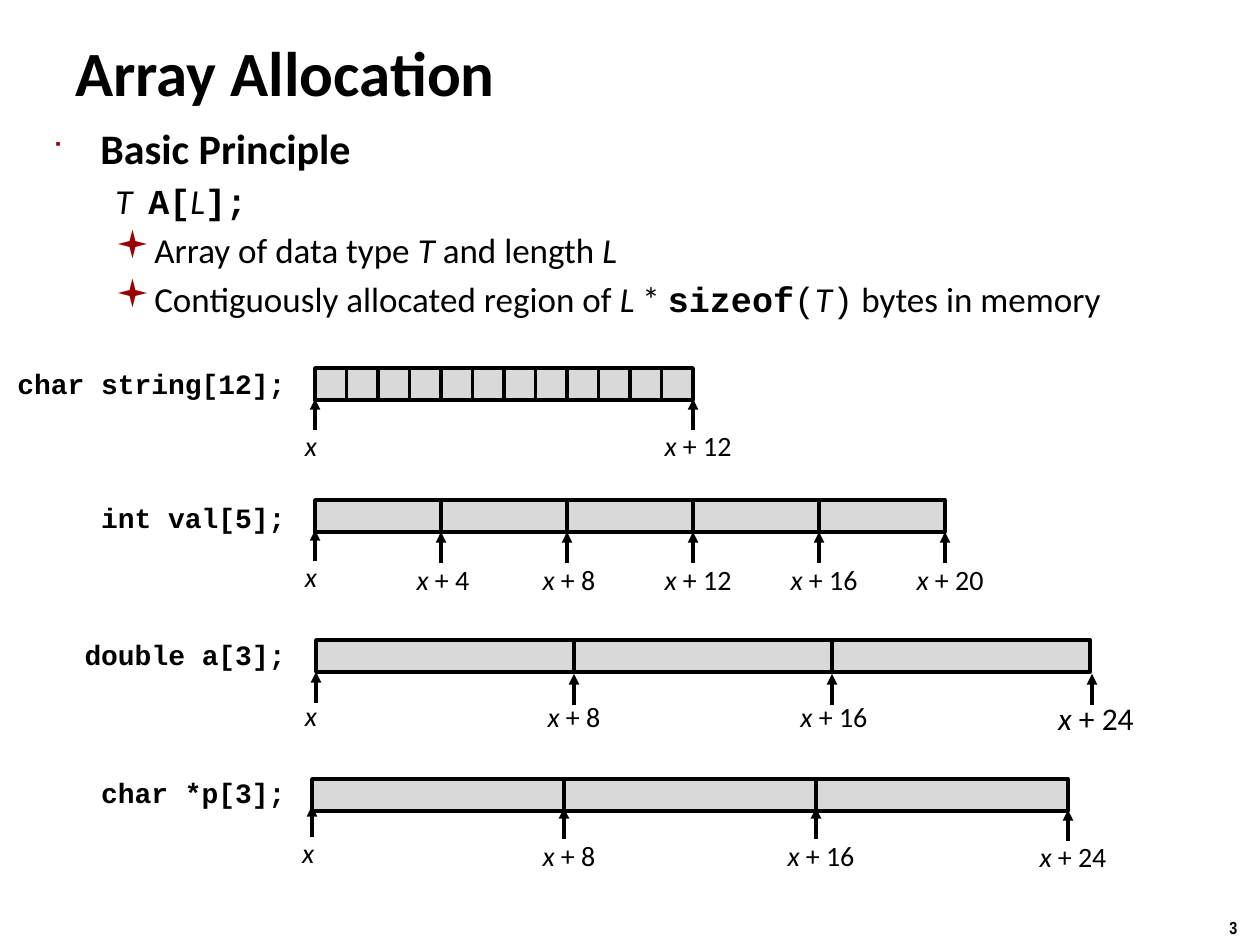
from dataclasses import dataclass

from lxml.etree import SubElement
from pptx import Presentation
from pptx.dml.color import RGBColor
from pptx.enum.shapes import MSO_CONNECTOR, MSO_SHAPE
from pptx.enum.text import MSO_ANCHOR, PP_ALIGN
from pptx.oxml.ns import qn
from pptx.util import Pt

EMU_PER_PX = 914400 / 126


@dataclass(frozen=True)
class Theme:
    ink: RGBColor = RGBColor(0, 0, 0)
    cell: RGBColor = RGBColor(0xD9, 0xD9, 0xD9)
    bullet: str = "990000"
    sans: str = "Calibri"
    mono: str = "Courier New"
    narrow: str = "Arial Narrow"
    title: int = 36
    heading: int = 24
    body: int = 20
    label: int = 16
    large_label: int = 18
    page: int = 10
    outline: int = 2


THEME = Theme()


@dataclass(frozen=True)
class Span:
    text: str
    italic: bool = False
    bold: bool = False
    font: str = THEME.sans
    tracking: int = 0


@dataclass(frozen=True)
class Bullet:
    char: str
    percent: int


@dataclass(frozen=True)
class Line:
    spans: tuple[Span, ...]
    size: int
    margin: int = 0
    hanging: int = 0
    before: float = 0
    bullet: Bullet | None = None
    align: PP_ALIGN = PP_ALIGN.LEFT


@dataclass(frozen=True)
class Mark:
    offset: int
    label_shift: int
    tip: int
    label_top: int
    nudge: int = 0
    size: int = THEME.label


@dataclass(frozen=True)
class ArrayRow:
    declaration: str
    declaration_top: int
    left: int
    top: int
    span: int
    count: int
    marks: tuple[Mark, ...]


CELL_HEIGHT = 32
ARROW_LENGTH = 31
SQUARE = Bullet("■", 60)
SMALL_SQUARE = Bullet("▪", 110)

PRINCIPLE = (
    Line((Span("Basic Principle", bold=True),), THEME.heading, 48, -48, 4.8, SQUARE),
    Line(
        (
            Span("T", italic=True),
            Span(" ", tracking=450),
            Span("A[", bold=True, font=THEME.mono),
            Span("L", italic=True),
            Span("];", bold=True, font=THEME.mono),
        ),
        THEME.body, 102, -39, 4,
    ),
    Line(
        (
            Span("Array of data type "),
            Span("T", italic=True),
            Span(" and length "),
            Span("L", italic=True),
        ),
        THEME.body, 102, -39, 4, SMALL_SQUARE,
    ),
    Line(
        (
            Span("Contiguously allocated region of "),
            Span("L", italic=True),
            Span(" * "),
            Span("sizeof", bold=True, font=THEME.mono),
            Span("(", font=THEME.mono),
            Span("T", italic=True),
            Span(")", font=THEME.mono),
            Span(" bytes in memory"),
        ),
        THEME.body, 102, -39, 4, SMALL_SQUARE,
    ),
)

ROWS = (
    ArrayRow("char string[12];", 360, 315, 368, 378, 12,
             (Mark(0, -4, 399, 422), Mark(12, 5, 399, 422))),
    ArrayRow("int val[5];", 494, 315, 500, 630, 5,
             (Mark(0, -4, 530, 553), Mark(4, 2, 532, 556), Mark(8, 2, 532, 556),
              Mark(12, 5, 532, 556), Mark(16, 5, 532, 556), Mark(20, 5, 532, 556))),
    ArrayRow("double a[3];", 631, 316, 640, 774, 3,
             (Mark(0, -5, 672, 692), Mark(8, 0, 674, 693), Mark(16, 2, 674, 693),
              Mark(24, 4, 674, 693, nudge=2, size=THEME.large_label))),
    ArrayRow("char *p[3];", 769, 312, 779, 756, 3,
             (Mark(0, -4, 806, 829), Mark(8, 5, 808, 832), Mark(16, 5, 808, 832),
              Mark(24, 5, 810, 833))),
)


def px(length: float) -> int:
    return round(length * EMU_PER_PX)


def add_bullet(properties, bullet: Bullet) -> None:
    color = SubElement(properties, qn("a:buClr"))
    SubElement(color, qn("a:srgbClr"), val=THEME.bullet)
    SubElement(properties, qn("a:buSzPct"), val=str(bullet.percent * 1000))
    SubElement(properties, qn("a:buFont"), typeface="Wingdings")
    SubElement(properties, qn("a:buChar"), char=bullet.char)


def fill_paragraph(paragraph, line: Line) -> None:
    paragraph.alignment = line.align
    paragraph.space_before = Pt(line.before)
    properties = paragraph._p.get_or_add_pPr()
    properties.set("marL", str(px(line.margin)))
    properties.set("indent", str(px(line.hanging)))
    if line.bullet:
        add_bullet(properties, line.bullet)
    paragraph.font.size = Pt(line.size)
    paragraph.font.color.rgb = THEME.ink
    shared = {(span.font, span.bold, span.italic) for span in line.spans}
    for span in line.spans:
        run = paragraph.add_run()
        run.text = span.text
        target = paragraph.font if len(shared) == 1 else run.font
        target.name, target.bold, target.italic = span.font, span.bold, span.italic
        if span.tracking:
            run._r.get_or_add_rPr().set("spc", str(span.tracking))


def add_text(slide, left: int, top: int, width: int, height: int,
             lines: tuple[Line, ...], anchor: MSO_ANCHOR = MSO_ANCHOR.TOP) -> None:
    frame = slide.shapes.add_textbox(px(left), px(top), px(width), px(height)).text_frame
    frame.word_wrap = True
    frame.vertical_anchor = anchor
    for index, line in enumerate(lines):
        fill_paragraph(frame.add_paragraph() if index else frame.paragraphs[0], line)


def add_cell(slide, left: float, top: int, width: float) -> None:
    cell = slide.shapes.add_shape(
        MSO_SHAPE.RECTANGLE, px(left), px(top), px(width), px(CELL_HEIGHT))
    cell.shadow.inherit = False
    cell.fill.solid()
    cell.fill.fore_color.rgb = THEME.cell
    cell.line.color.rgb = THEME.ink
    cell.line.width = Pt(THEME.outline)


def add_mark(slide, x: float, mark: Mark) -> None:
    arrow = slide.shapes.add_connector(
        MSO_CONNECTOR.STRAIGHT, px(x), px(mark.tip + ARROW_LENGTH), px(x), px(mark.tip))
    arrow.line.color.rgb = THEME.ink
    arrow.line.width = Pt(THEME.outline)
    properties = arrow._element.spPr
    SubElement(properties.find(qn("a:ln")), qn("a:tailEnd"), type="triangle")
    SubElement(properties, qn("a:effectLst"))
    if mark.offset:
        width, spans = 138, (Span("x ", italic=True), Span(f"+ {mark.offset}"))
    else:
        width, spans = 54, (Span("x", italic=True),)
    add_text(slide, x + mark.label_shift - width / 2, mark.label_top, width, 47,
             (Line(spans, mark.size, align=PP_ALIGN.CENTER),))


def add_array(slide, row: ArrayRow) -> None:
    declaration = Span(row.declaration, bold=True, font=THEME.mono)
    add_text(slide, 0, row.declaration_top, 298, 47,
             (Line((declaration,), THEME.label, align=PP_ALIGN.RIGHT),))
    cell_width = row.span / row.count
    for index in range(row.count):
        add_cell(slide, row.left + index * cell_width, row.top, cell_width)
    total = row.marks[-1].offset
    for mark in row.marks:
        add_mark(slide, row.left + row.span * mark.offset / total + mark.nudge, mark)


def main() -> None:
    deck = Presentation()
    deck.slide_width, deck.slide_height = px(1260), px(945)
    slide = deck.slides.add_slide(deck.slide_layouts[6])
    add_text(slide, 1217, 911, 43, 34,
             (Line((Span("3", bold=True, font=THEME.narrow),), THEME.page),))
    add_text(slide, 63, 32, 819, 79,
             (Line((Span("Array Allocation", bold=True),), THEME.title),), MSO_ANCHOR.MIDDLE)
    add_text(slide, 40, 116, 1145, 223, PRINCIPLE)
    for row in ROWS:
        add_array(slide, row)
    deck.save("out.pptx")


if __name__ == "__main__":
    main()
